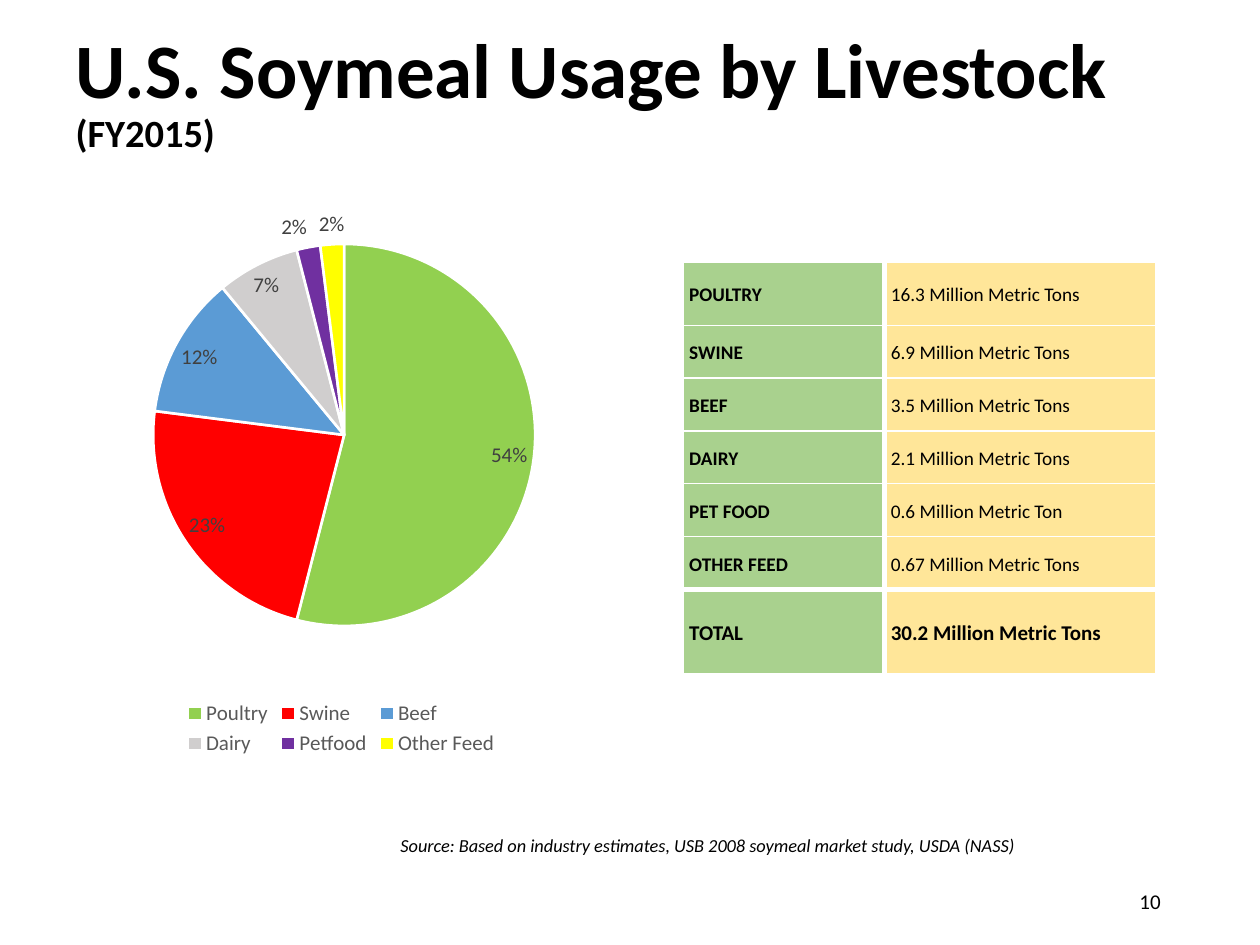
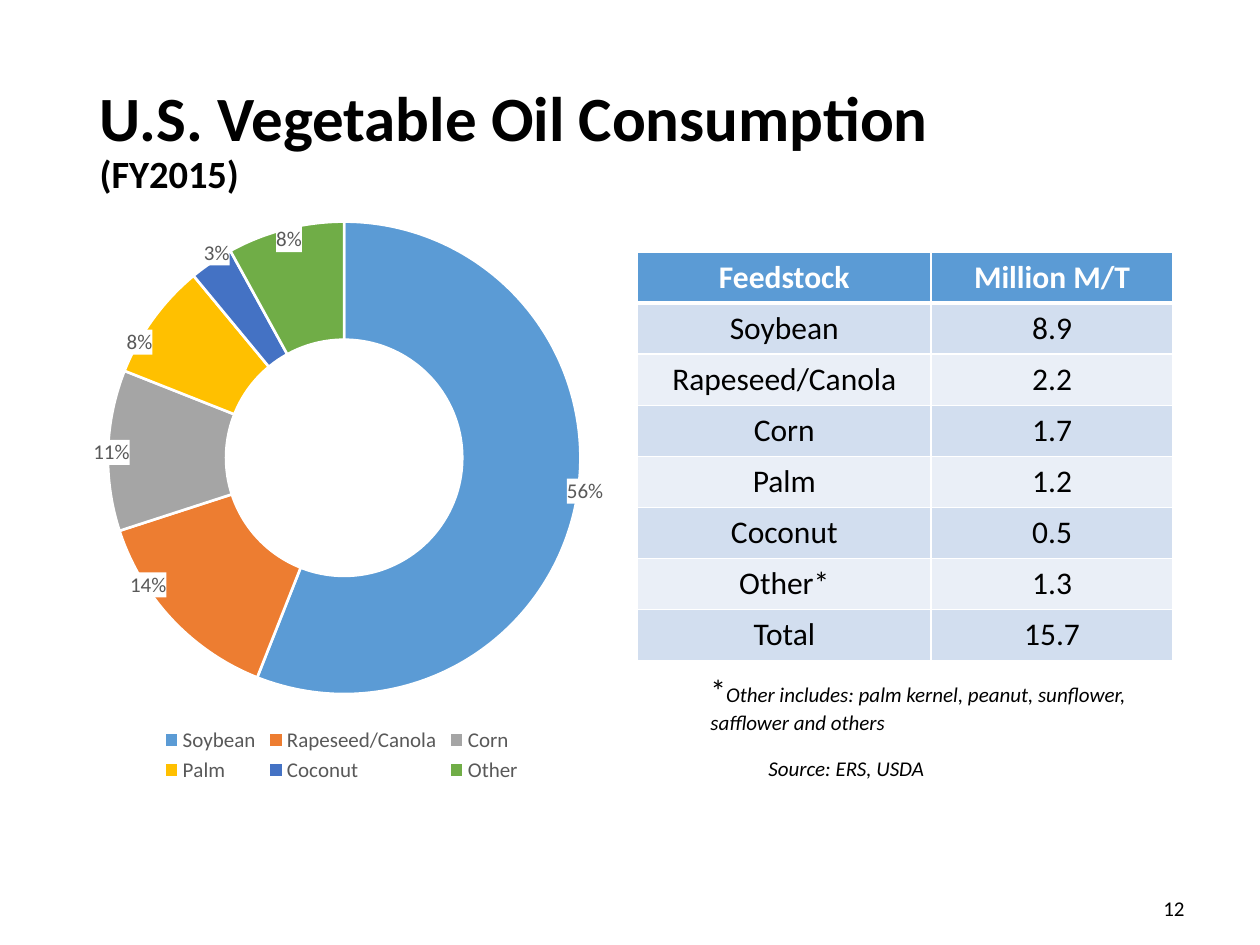
from copy import deepcopy
from dataclasses import dataclass

from lxml.etree import SubElement
from pptx import Presentation
from pptx.chart.chart import Chart
from pptx.chart.data import CategoryChartData
from pptx.dml.color import RGBColor
from pptx.enum.chart import XL_CHART_TYPE, XL_LABEL_POSITION, XL_LEGEND_POSITION
from pptx.enum.text import MSO_ANCHOR, MSO_AUTO_SIZE, PP_ALIGN
from pptx.oxml import parse_xml
from pptx.oxml.ns import nsdecls, qn
from pptx.slide import Slide
from pptx.table import _Cell
from pptx.text.text import Font
from pptx.util import Inches, Pt

FONT = "Calibri"
BLACK = RGBColor(0x00, 0x00, 0x00)
WHITE = RGBColor(0xFF, 0xFF, 0xFF)
LEGEND_GREY = RGBColor(0x59, 0x59, 0x59)
LABEL_GREY = RGBColor(0x40, 0x40, 0x40)
RED = RGBColor(0xFF, 0x00, 0x00)
LIME = RGBColor(0x92, 0xD0, 0x50)
BLUE = RGBColor(0x5B, 0x9B, 0xD5)
LIGHT_GREY = RGBColor(0xD0, 0xCE, 0xCE)
PURPLE = RGBColor(0x70, 0x30, 0xA0)
YELLOW = RGBColor(0xFF, 0xFF, 0x00)
ORANGE = RGBColor(0xED, 0x7D, 0x31)
GREY = RGBColor(0xA5, 0xA5, 0xA5)
GOLD = RGBColor(0xFF, 0xC0, 0x00)
ROYAL_BLUE = RGBColor(0x44, 0x72, 0xC4)
GREEN = RGBColor(0x70, 0xAD, 0x47)
SOFT_GREEN = RGBColor(0xA9, 0xD1, 0x8E)
SOFT_YELLOW = RGBColor(0xFF, 0xE6, 0x99)
BAND_DARK = RGBColor(0xD2, 0xDE, 0xEF)
BAND_LIGHT = RGBColor(0xEA, 0xEF, 0xF7)

Box = tuple[float, float, float, float]


@dataclass
class Slice:
    name: str
    value: float
    color: RGBColor
    label_shift: tuple[float, float] = (0, 0)


@dataclass
class CellStyle:
    fill: RGBColor
    size: float
    bold: bool = False
    color: RGBColor = BLACK


@dataclass
class TableGrid:
    box: Box
    columns: list[float]
    rows: list[float]
    vertical_rules: list[float]
    horizontal_rules: list[float]
    side_margin: float
    alignment: PP_ALIGN
    anchor: MSO_ANCHOR
    line_spacing: float


@dataclass
class TextPart:
    text: str
    size: float
    italic: bool = False


LIVESTOCK_SLICES = [
    Slice("Poultry", 0.54, LIME),
    Slice("Swine", 0.23, RED),
    Slice("Beef", 0.12, BLUE),
    Slice("Dairy", 0.07, LIGHT_GREY),
    Slice("Petfood", 0.02, PURPLE),
    Slice("Other Feed", 0.02, YELLOW),
]
OIL_SLICES = [
    Slice("Soybean", 56, BLUE, (0.12, 0)),
    Slice("Rapeseed/Canola", 14, ORANGE, (-0.12, 0.01)),
    Slice("Corn", 11, GREY, (-0.1, 0)),
    Slice("Palm", 8, GOLD, (-0.11, -0.02)),
    Slice("Coconut", 3, ROYAL_BLUE, (-0.05, -0.1)),
    Slice("Other", 8, GREEN, (-0.02, -0.08)),
]
LIVESTOCK_ROWS = [
    ("POULTRY", "16.3 Million Metric Tons"),
    ("SWINE", "6.9 Million Metric Tons"),
    ("BEEF", "3.5 Million Metric Tons"),
    ("DAIRY", "2.1 Million Metric Tons"),
    ("PET FOOD", "0.6 Million Metric Ton"),
    ("OTHER FEED", "0.67 Million Metric Tons"),
    ("TOTAL", "30.2 Million Metric Tons"),
]
OIL_ROWS = [
    ("Feedstock", "Million M/T"),
    ("Soybean", "8.9"),
    ("Rapeseed/Canola", "2.2"),
    ("Corn", "1.7"),
    ("Palm", "1.2"),
    ("Coconut", "0.5"),
    ("Other*", "1.3"),
    ("Total", "15.7"),
]
LIVESTOCK_GRID = TableGrid(
    (5.42, 2.08, 3.75, 3.25), [1.6, 2.15], [0.5] + [0.42] * 5 + [0.67],
    [1, 3, 1], [1, 0.25, 1, 1, 1, 1, 3, 1],
    0.05, PP_ALIGN.LEFT, MSO_ANCHOR.MIDDLE, 1.15,
)
OIL_GRID = TableGrid(
    (5.06, 2, 4.25, 3.24), [2.33, 1.92], [0.405] * 8,
    [1, 1, 1], [1, 3] + [1] * 7,
    0.1, PP_ALIGN.CENTER, MSO_ANCHOR.TOP, 1,
)


def set_font(font: Font, size: float, color: RGBColor = BLACK, bold: bool = False) -> None:
    font.name = FONT
    font.size = Pt(size)
    font.bold = bold
    font.color.rgb = color


def add_titled_slide(presentation: Presentation, title: str, size: float, box: Box) -> Slide:
    slide = presentation.slides.add_slide(presentation.slide_layouts[5])
    shape = slide.shapes.title
    shape.left, shape.top, shape.width, shape.height = map(Inches, box)
    frame = shape.text_frame
    frame.auto_size = MSO_AUTO_SIZE.NONE
    frame.vertical_anchor = MSO_ANCHOR.MIDDLE
    paragraph = frame.paragraphs[0]
    paragraph.alignment = PP_ALIGN.LEFT
    paragraph.line_spacing = 0.9
    heading = paragraph.add_run()
    heading.text = title
    paragraph.add_line_break()
    year = paragraph.add_run()
    year.text = "(FY2015)"
    set_font(heading.font, size, bold=True)
    set_font(year.font, 22, bold=True)
    return slide


def add_text(slide: Slide, box: Box, parts: list[TextPart], level: int = 0,
             alignment: PP_ALIGN = PP_ALIGN.LEFT, anchor: MSO_ANCHOR = MSO_ANCHOR.TOP) -> None:
    frame = slide.shapes.add_textbox(*map(Inches, box)).text_frame
    frame.word_wrap = True
    frame.vertical_anchor = anchor
    paragraph = frame.paragraphs[0]
    paragraph.level = level
    paragraph.alignment = alignment
    for part in parts:
        run = paragraph.add_run()
        run.text = part.text
        set_font(run.font, part.size)
        run.font.italic = part.italic


def add_page_number(slide: Slide, number: int, box: Box) -> None:
    add_text(slide, box, [TextPart(str(number), 12)],
             alignment=PP_ALIGN.RIGHT, anchor=MSO_ANCHOR.MIDDLE)


def set_plot_area(chart: Chart, area: Box) -> None:
    plot_area = chart.plots[0]._element.getparent()
    for layout in plot_area.findall(qn("c:layout")):
        plot_area.remove(layout)
    sizes = "".join(f'<c:{tag} val="{value}"/>' for tag, value in zip("xywh", area))
    plot_area.insert(0, parse_xml(
        f'<c:layout {nsdecls("c")}><c:manualLayout><c:layoutTarget val="inner"/>'
        f'<c:xMode val="edge"/><c:yMode val="edge"/>{sizes}</c:manualLayout></c:layout>'
    ))


def add_share_chart(slide: Slide, kind: XL_CHART_TYPE, box: Box, area: Box,
                    slices: list[Slice], label_color: RGBColor) -> Chart:
    data = CategoryChartData()
    data.categories = [part.name for part in slices]
    data.add_series("Series 1", [part.value for part in slices])
    chart = slide.shapes.add_chart(kind, *map(Inches, box), data).chart
    chart.has_title = False
    set_font(chart.font, 10)
    chart.has_legend = True
    chart.legend.position = XL_LEGEND_POSITION.BOTTOM
    chart.legend.include_in_layout = False
    set_font(chart.legend.font, 12, LEGEND_GREY)
    set_plot_area(chart, area)
    chart.plots[0].vary_by_categories = True
    series = chart.plots[0].series[0]
    for index, part in enumerate(slices):
        point_format = series.points[index].format
        point_format.fill.solid()
        point_format.fill.fore_color.rgb = part.color
        point_format.line.color.rgb = WHITE
        point_format.line.width = Pt(1.5)
    labels = series.data_labels
    labels.number_format = "0%"
    labels.number_format_is_linked = False
    set_font(labels.font, 12, label_color)
    return chart


def shift_percent_labels(chart: Chart, slices: list[Slice]) -> None:
    labels = chart.plots[0].series[0].data_labels
    labels.show_value = False
    labels.show_percentage = True
    element = labels._element
    for index, part in enumerate(slices):
        x, y = part.label_shift
        label = parse_xml(
            f'<c:dLbl {nsdecls("c", "a")}><c:idx val="{index}"/><c:layout><c:manualLayout>'
            f'<c:x val="{x}"/><c:y val="{y}"/></c:manualLayout></c:layout>'
            f'<c:spPr><a:solidFill><a:srgbClr val="{WHITE}"/></a:solidFill></c:spPr></c:dLbl>'
        )
        label.insert(2, deepcopy(element.find(qn("c:numFmt"))))
        label.append(deepcopy(element.find(qn("c:txPr"))))
        for item in ("LegendKey", "Val", "CatName", "SerName", "Percent", "BubbleSize"):
            SubElement(label, qn(f"c:show{item}")).set("val", str(int(item == "Percent")))
        element.insert(index, label)


def add_borders(cell: _Cell, widths: dict[str, float]) -> None:
    properties = cell._tc.get_or_add_tcPr()
    for side, width in widths.items():
        properties.append(parse_xml(
            f'<a:ln{side} {nsdecls("a")} w="{Pt(width)}"><a:solidFill>'
            f'<a:srgbClr val="{WHITE}"/></a:solidFill></a:ln{side}>'
        ))


def add_data_table(slide: Slide, grid: TableGrid, rows: list[tuple[str, str]],
                   styles: list[list[CellStyle]]) -> None:
    table = slide.shapes.add_table(len(rows), len(grid.columns), *map(Inches, grid.box)).table
    table.first_row = table.horz_banding = False
    for column, width in zip(table.columns, grid.columns):
        column.width = Inches(width)
    for row_index, texts in enumerate(rows):
        table.rows[row_index].height = Inches(grid.rows[row_index])
        for column_index, text in enumerate(texts):
            cell = table.cell(row_index, column_index)
            style = styles[row_index][column_index]
            cell.text = text
            cell.margin_left = cell.margin_right = Inches(grid.side_margin)
            cell.margin_top = cell.margin_bottom = Inches(0.05)
            cell.vertical_anchor = grid.anchor
            add_borders(cell, {
                "L": grid.vertical_rules[column_index],
                "R": grid.vertical_rules[column_index + 1],
                "T": grid.horizontal_rules[row_index],
                "B": grid.horizontal_rules[row_index + 1],
            })
            cell.fill.solid()
            cell.fill.fore_color.rgb = style.fill
            paragraph = cell.text_frame.paragraphs[0]
            paragraph.alignment = grid.alignment
            paragraph.line_spacing = grid.line_spacing
            set_font(paragraph.font, style.size, style.color, style.bold)


def build_livestock_slide(presentation: Presentation) -> None:
    slide = add_titled_slide(presentation, "U.S. Soymeal Usage by Livestock", 44, (0.5, 0.16, 9, 1.17))
    chart = add_share_chart(slide, XL_CHART_TYPE.PIE, (0.5, 1.58, 4.42, 4.46),
                            (0.16, 0.08, 0.69, 0.68), LIVESTOCK_SLICES, LABEL_GREY)
    labels = chart.plots[0].series[0].data_labels
    labels.show_value = True
    labels.show_percentage = False
    labels.position = XL_LABEL_POSITION.BEST_FIT
    body = [CellStyle(SOFT_GREEN, 11, True), CellStyle(SOFT_YELLOW, 11)]
    total = [CellStyle(SOFT_GREEN, 12, True), CellStyle(SOFT_YELLOW, 12, True)]
    add_data_table(slide, LIVESTOCK_GRID, LIVESTOCK_ROWS, [body] * 6 + [total])
    add_page_number(slide, 10, (7.06, 6.95, 2.25, 0.4))
    source = "Source: Based on industry estimates, USB 2008 soymeal market study, USDA (NASS)"
    add_text(slide, (2.58, 6.57, 7.17, 0.28), [TextPart(source, 10.5, True)], level=1)


def build_oil_slide(presentation: Presentation) -> None:
    slide = add_titled_slide(presentation, "U.S. Vegetable Oil Consumption", 36, (0.69, 0.4, 8.62, 1.45))
    chart = add_share_chart(slide, XL_CHART_TYPE.DOUGHNUT, (0.5, 1.62, 4.42, 4.63),
                            (0.08, 0.03, 0.85, 0.81), OIL_SLICES, LEGEND_GREY)
    chart.plots[0]._element.find(qn("c:holeSize")).set("val", "75")
    shift_percent_labels(chart, OIL_SLICES)
    header = [CellStyle(BLUE, 18, True, WHITE)] * 2
    bands = [[CellStyle(fill, 18)] * 2 for fill in (BAND_DARK, BAND_LIGHT)]
    add_data_table(slide, OIL_GRID, OIL_ROWS, [header] + [bands[row % 2] for row in range(7)])
    add_page_number(slide, 12, (8.5, 7.01, 1, 0.4))
    note = "Other includes: palm kernel, peanut, sunflower, safflower and others"
    add_text(slide, (5.54, 5.28, 3.96, 0.61), [TextPart("*", 18), TextPart(note, 12, True)])
    add_text(slide, (6, 5.95, 3.25, 0.3), [TextPart("Source: ERS, USDA", 12, True)])


def main() -> None:
    presentation = Presentation()
    presentation.slide_width, presentation.slide_height = Inches(10), Inches(7.5)
    build_livestock_slide(presentation)
    build_oil_slide(presentation)
    presentation.save("out.pptx")


if __name__ == "__main__":
    main()
